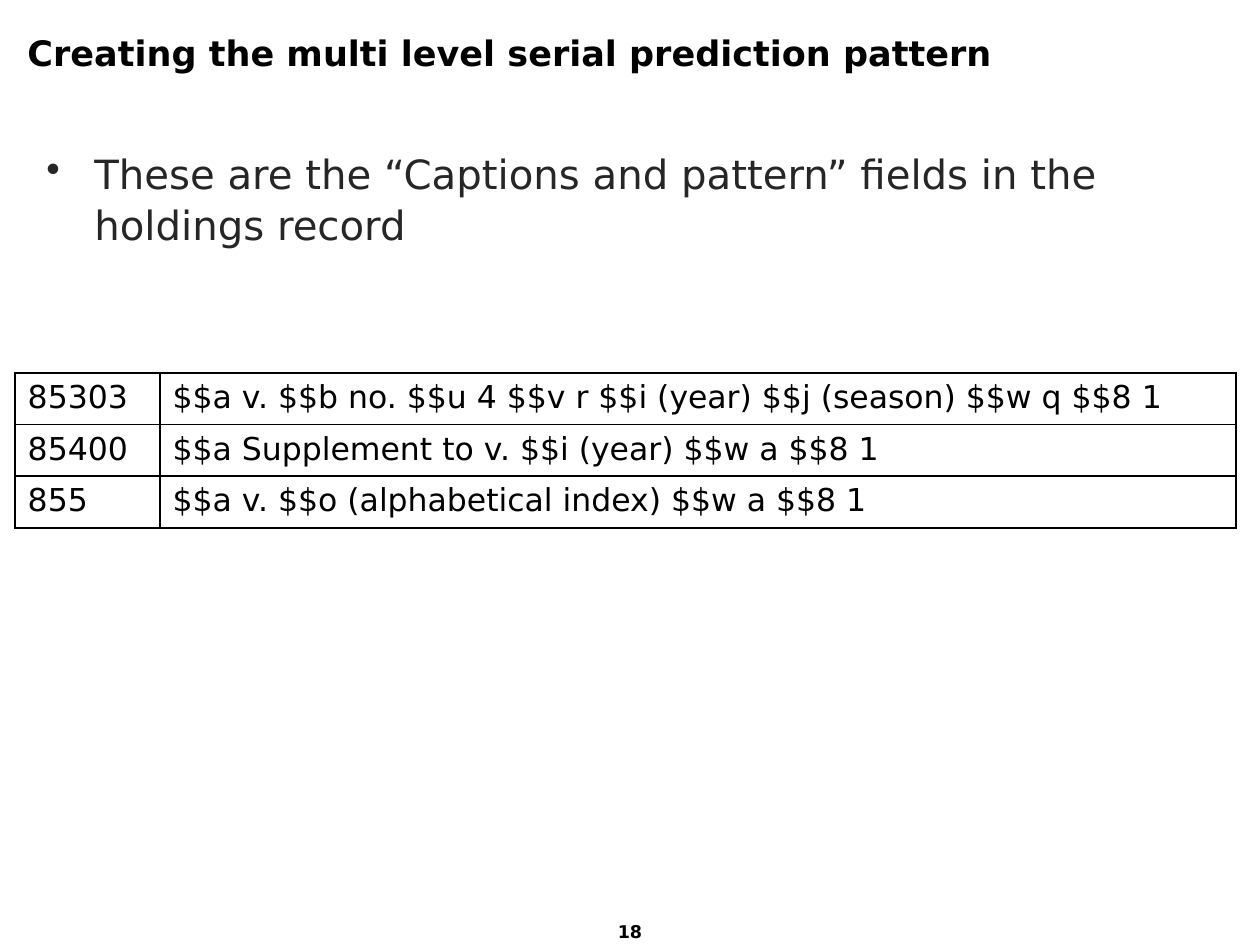
from lxml import etree
from pptx import Presentation
from pptx.dml.color import RGBColor
from pptx.enum.text import MSO_ANCHOR, PP_ALIGN
from pptx.oxml.ns import qn
from pptx.util import Inches, Pt

BLACK = RGBColor(0x00, 0x00, 0x00)
CHARCOAL = RGBColor(0x26, 0x26, 0x26)
FONT = "DejaVu Sans"
LEFT, CENTER = PP_ALIGN.LEFT, PP_ALIGN.CENTER
TOP, MIDDLE, BOTTOM = MSO_ANCHOR.TOP, MSO_ANCHOR.MIDDLE, MSO_ANCHOR.BOTTOM

FIELDS = [
    ("85303", "$$a v. $$b no. $$u 4 $$v r $$i (year) $$j (season) $$w q $$8 1"),
    ("85400", "$$a Supplement to v. $$i (year) $$w a $$8 1"),
    ("855", "$$a v. $$o (alphabetical index) $$w a $$8 1"),
]
COLUMN_WIDTHS = [1.15, 8.54]
ROW_HEIGHT = 0.41


def write(para, text, size, color=BLACK, bold=False):
    span = para.add_run()
    span.text = text
    for name, value in {"name": FONT, "size": Pt(size), "bold": bold}.items():
        setattr(span.font, name, value)
    span.font.color.rgb = color


def add_text_box(page, place, anchor, align):
    """Add a wrapping text box and return its first paragraph."""
    frame = page.shapes.add_textbox(*map(Inches, place)).text_frame
    frame.word_wrap = True
    frame.vertical_anchor = anchor
    para = frame.paragraphs[0]
    para.alignment = align
    return para


deck = Presentation()
deck.slide_width, deck.slide_height = Inches(10), Inches(7.5)
page = deck.slides.add_slide(deck.slide_layouts[6])

number = add_text_box(page, (4.68, 7.03, 0.64, 0.5), BOTTOM, CENTER)
write(number, "18", 10, bold=True)

bullet = add_text_box(page, (0.27, 1.12, 9.37, 1.37), TOP, LEFT)
bullet.line_spacing = 1.05
properties = bullet._p.get_or_add_pPr()
properties.set("marL", str(Inches(0.38)))
properties.set("indent", str(Inches(-0.38)))
etree.SubElement(properties, qn("a:buChar")).set("char", "•")
write(bullet, "These are the “Captions and pattern” fields in the holdings record", 23, CHARCOAL)

title = add_text_box(page, (0.12, 0.13, 9.76, 0.58), MIDDLE, LEFT)
write(title, "Creating the multi level serial prediction pattern", 20, bold=True)

# Table of caption and pattern fields
table_size = (sum(COLUMN_WIDTHS), ROW_HEIGHT * len(FIELDS))
table = page.shapes.add_table(
    len(FIELDS), len(COLUMN_WIDTHS), Inches(0.12), Inches(2.96), *map(Inches, table_size)
).table
table.first_row = table.horz_banding = False
for column, width in zip(table.columns, COLUMN_WIDTHS):
    column.width = Inches(width)

for row, texts in zip(table.rows, FIELDS):
    row.height = Inches(ROW_HEIGHT)
    for cell, text in zip(row.cells, texts):
        write(cell.text_frame.paragraphs[0], text, 18)
        cell_properties = cell._tc.get_or_add_tcPr()
        for side in ("lnL", "lnR", "lnT", "lnB"):
            border = etree.SubElement(cell_properties, qn(f"a:{side}"), w=str(Pt(1)))
            paint = etree.SubElement(border, qn("a:solidFill"))
            etree.SubElement(paint, qn("a:srgbClr"), val=str(BLACK))
        cell.fill.background()

deck.save("out.pptx")
